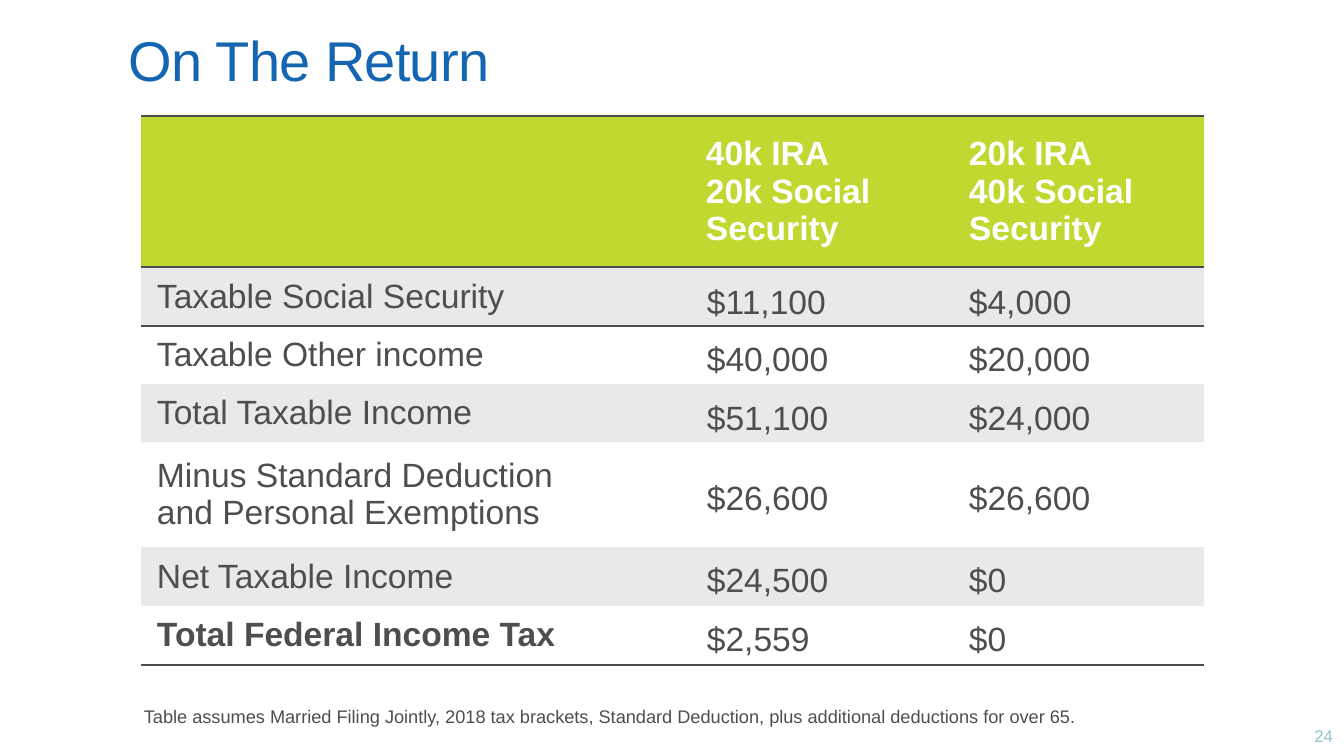
from lxml.etree import SubElement as Sub
from pptx import Presentation
from pptx.dml.color import RGBColor as RGB
from pptx.enum.text import MSO_ANCHOR as ANC, PP_ALIGN as AL
from pptx.oxml.ns import qn
from pptx.util import Emu, Pt

THEME = {
    "font": "Arial",
    "title": {"size": 40, "color": "1566B2"},
    "header": {"size": 24, "color": "FFFFFF", "bold": True},
    "body": {"size": 24, "color": "4E4E50", "bold": False},
    "total": {"size": 24, "color": "4E4E50", "bold": True},
    "note": {"size": 13, "color": "4E4E50"},
    "number": {"size": 12, "color": "92C2CD"},
    "rule": "4E4E50",
    "head_fill": "C0D82F",
    "bands": ("E9E9E9", "FFFFFF"),
}
NO_STYLE = "{2D5ABB26-0587-4C30-8999-92F81FD0307C}"


def px(n):
    return Emu(round(n * 914400 / 100.8))


def write(tf, text, look, **para):
    fmt = {"name": THEME["font"], **THEME[look]}
    size, color = Pt(fmt.pop("size")), RGB.from_string(fmt.pop("color"))
    tf.text = text
    tf.word_wrap = True
    for p in tf.paragraphs:
        for key, value in para.items():
            setattr(p, key, value)
        for r in p.runs:
            r.font.size = size
            r.font.color.rgb = color
            for key, value in fmt.items():
                setattr(r.font, key, value)


prs = Presentation()
prs.slide_width, prs.slide_height = px(1344), px(756)
s = prs.slides.add_slide(prs.slide_layouts[6])

texts = [
    ("24", "number", (1041, 716, 302, 40), {"alignment": AL.RIGHT}),
    ("On The Return", "title", (119, 28, 1172, 69), {"line_spacing": 0.9}),
    ("Table assumes Married Filing Jointly, 2018 tax brackets, Standard Deduction, "
     "plus additional deductions for over 65.", "note", (134, 700, 1078, 32), {}),
]
for text, look, box, para in texts:
    tf = s.shapes.add_textbox(*map(px, box)).text_frame
    write(tf, text, look, **para)
    if look == "number":
        tf.vertical_anchor = ANC.MIDDLE
    if look == "title":
        tf.paragraphs[0].runs[0].font._element.set("spc", "-50")

headers = ["", "40k IRA\n20k Social Security", "20k IRA\n40k Social Security"]
labels = [
    "Taxable Social Security",
    "Taxable Other income",
    "Total Taxable Income",
    "Minus Standard Deduction\vand Personal Exemptions",
    "Net Taxable Income",
    "Total Federal Income Tax",
]
rows = [headers] + [[label, "", ""] for label in labels]
widths = [549, 263, 251]
heights = [151, 59, 58, 58, 105, 59, 59]
last = len(rows) - 1
rules = {0: ("a:lnT", "a:lnB"), 1: ("a:lnT",), last: ("a:lnB",)}

frame = s.shapes.add_table(len(rows), len(widths), px(141), px(116),
                           px(sum(widths)), px(sum(heights)))
table = frame.table
table._tbl.tblPr.find(qn("a:tableStyleId")).text = NO_STYLE
for col, width in zip(table.columns, widths):
    col.width = px(width)
for row, height in zip(table.rows, heights):
    row.height = px(height)

cell_fmt = {"margin_left": px(16), "margin_right": px(16), "margin_top": px(5),
            "margin_bottom": px(5), "vertical_anchor": ANC.MIDDLE}
for i, row in enumerate(rows):
    look = "header" if i == 0 else "total" if i == last else "body"
    fill = THEME["head_fill"] if i == 0 else THEME["bands"][(i - 1) % 2]
    for j, text in enumerate(row):
        cell = table.cell(i, j)
        for key, value in cell_fmt.items():
            setattr(cell, key, value)
        if text:
            write(cell.text_frame, text, look)
        tcPr = cell._tc.get_or_add_tcPr()
        for side in rules.get(i, ()):
            ln = Sub(tcPr, qn(side), w=str(Pt(2)))
            Sub(Sub(ln, qn("a:solidFill")), qn("a:srgbClr"), val=THEME["rule"])
        cell.fill.solid()
        cell.fill.fore_color.rgb = RGB.from_string(fill)

amounts = {
    697: ["$11,100", "$40,000", "$51,100", "$26,600", "$24,500", "$2,559"],
    959: ["$4,000", "$20,000", "$24,000", "$26,600", "$0", "$0"],
}
tops = [276, 333, 392, 472, 554, 613]
for left, column in amounts.items():
    for top, amount in zip(tops, column):
        width = 71 if amount == "$0" else 155 if len(amount) == 6 else 179
        box = s.shapes.add_textbox(px(left), px(top), px(width), px(50))
        write(box.text_frame, amount, "body")

prs.save("out.pptx")
